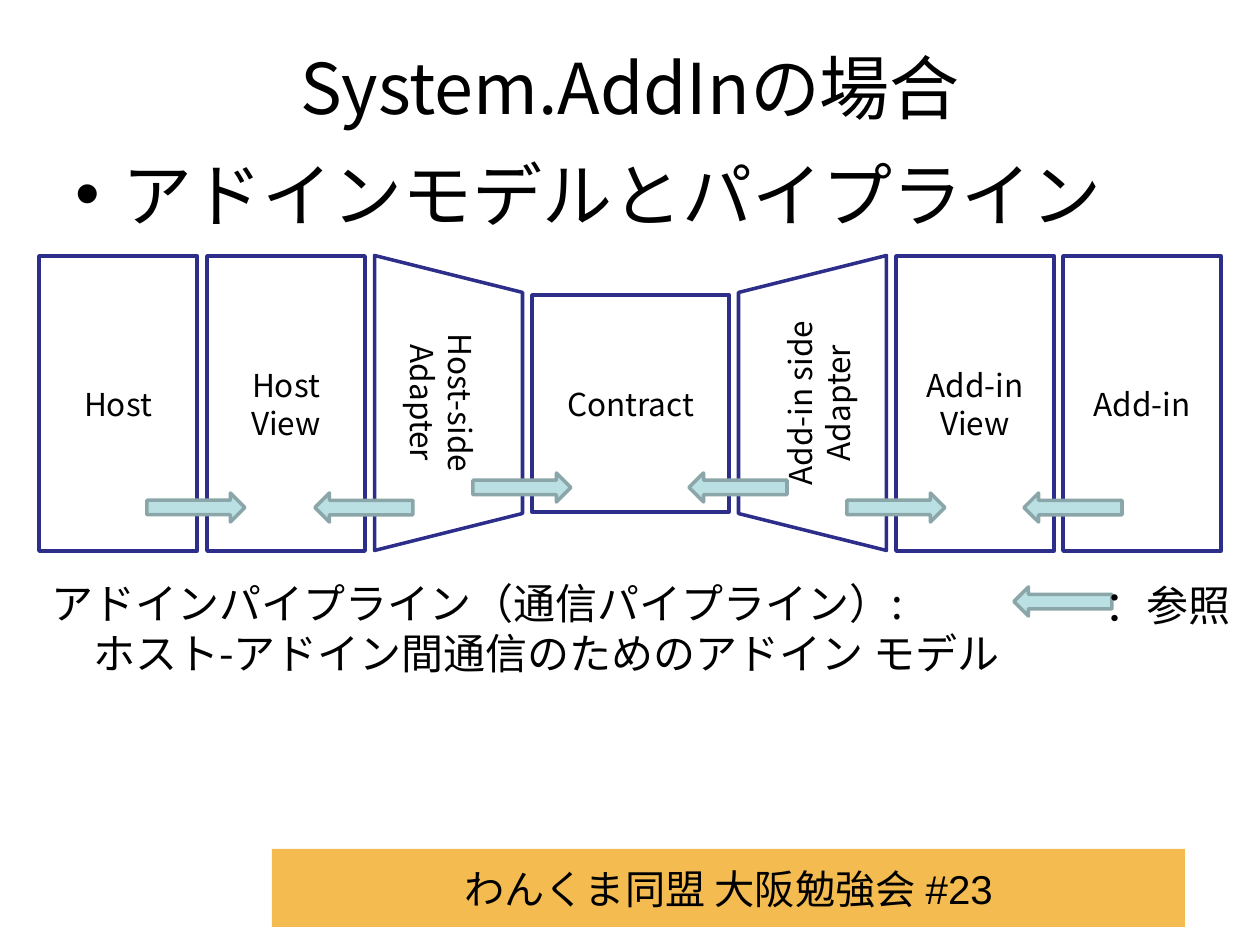
from lxml import etree
from pptx import Presentation
from pptx.dml.color import RGBColor
from pptx.enum.shapes import MSO_SHAPE
from pptx.enum.text import MSO_ANCHOR, MSO_AUTO_SIZE, PP_ALIGN
from pptx.oxml.ns import qn
from pptx.util import Pt

PX = 914400 // 126
RECTANGLE = MSO_SHAPE.RECTANGLE
TRAPEZOID = MSO_SHAPE.TRAPEZOID
RIGHT_ARROW = MSO_SHAPE.RIGHT_ARROW
LEFT, CENTER = PP_ALIGN.LEFT, PP_ALIGN.CENTER
TOP, MIDDLE = MSO_ANCHOR.TOP, MSO_ANCHOR.MIDDLE
NO_AUTOFIT = MSO_AUTO_SIZE.NONE

BLACK = RGBColor(0x00, 0x00, 0x00)
WHITE = RGBColor(0xFF, 0xFF, 0xFF)
NAVY = RGBColor(0x2D, 0x2D, 0x8A)
PALE_TEAL = RGBColor(0xBB, 0xE0, 0xE3)
GREY_TEAL = RGBColor(0x8A, 0xA6, 0xA8)
ORANGE = RGBColor(0xF3, 0xBB, 0x50)
JAPANESE_FONT = "Noto Sans CJK JP"

STAGE_TOP, STAGE_WIDTH, STAGE_HEIGHT = 256, 158, 295
ADAPTER_DEPTH = 148
ARROW_WIDTH, ARROW_HEIGHT = 98, 29


def px(*lengths):
    return [length * PX for length in lengths]


def write_text(frame, text, size=18, font=JAPANESE_FONT, align=CENTER,
               anchor=MIDDLE, wrap=True):
    frame.auto_size = NO_AUTOFIT
    frame.word_wrap = wrap
    frame.vertical_anchor = anchor
    frame.text = text
    for paragraph in frame.paragraphs:
        paragraph.alignment = align
        paragraph.space_before = Pt(0)
        for run in paragraph.runs:
            run.font.size = Pt(size)
            run.font.name = font
            run.font.color.rgb = BLACK
            latin = run.font._element.find(qn("a:latin"))
            east_asian = etree.Element(qn("a:ea"), typeface=JAPANESE_FONT)
            latin.addnext(east_asian)


def fill_placeholder(placeholder, box, text, **text_format):
    placeholder.left, placeholder.top, placeholder.width, placeholder.height = px(*box)
    write_text(placeholder.text_frame, text, **text_format)


def add_block(slide, preset, box, fill, line=None, rotation=0):
    block = slide.shapes.add_shape(preset, *px(*box))
    block.shadow.inherit = False
    block.rotation = rotation
    block.fill.solid()
    block.fill.fore_color.rgb = fill
    if line is None:
        block.line.fill.background()
    else:
        block.line.color.rgb = line
        block.line.width = Pt(2)
    return block


def add_stage(slide, left, label):
    box = (left, STAGE_TOP, STAGE_WIDTH, STAGE_HEIGHT)
    stage = add_block(slide, RECTANGLE, box, WHITE, NAVY)
    write_text(stage.text_frame, label)


def add_adapter(slide, left, label, rotation):
    turn = (STAGE_HEIGHT - ADAPTER_DEPTH) // 2
    box = (left - turn, STAGE_TOP + turn, STAGE_HEIGHT, ADAPTER_DEPTH)
    adapter = add_block(slide, TRAPEZOID, box, WHITE, NAVY, rotation)
    write_text(adapter.text_frame, label, wrap=False)


def add_reference_arrow(slide, left, top, rotation):
    box = (left, top, ARROW_WIDTH, ARROW_HEIGHT)
    add_block(slide, RIGHT_ARROW, box, PALE_TEAL, GREY_TEAL, rotation)


def add_note(slide, box, text, wrap):
    note = slide.shapes.add_textbox(*px(*box))
    write_text(note.text_frame, text, size=24, align=LEFT, anchor=TOP, wrap=wrap)


def main():
    presentation = Presentation()
    presentation.slide_width, presentation.slide_height = px(1260, 945)
    slide = presentation.slides.add_slide(presentation.slide_layouts[1])

    banner = add_block(slide, RECTANGLE, (272, 849, 913, 78), ORANGE)
    write_text(banner.text_frame, "わんくま同盟 大阪勉強会 #23", size=23, font="Arial")

    title, body = slide.placeholders
    fill_placeholder(title, (63, 38, 1134, 97), "System.AddInの場合", size=40)
    fill_placeholder(body, (63, 145, 1134, 699), "アドインモデルとパイプライン",
                     size=40, align=LEFT, anchor=TOP)

    for left, label in ((39, "Host"), (207, "Host\nView"),
                        (896, "Add-in\nView"), (1063, "Add-in")):
        add_stage(slide, left, label)
    add_adapter(slide, 374, "Host-side\nAdapter", 90)
    add_adapter(slide, 738, "Add-in side\nAdapter", 270)
    contract = add_block(slide, RECTANGLE, (532, 295, 197, 217), WHITE, NAVY)
    write_text(contract.text_frame, "Contract")

    add_note(slide, (39, 571, 988, 115),
             "アドインパイプライン（通信パイプライン）:\n"
             "\u3000ホスト-アドイン間通信のためのアドイン モデル".replace("\u3000", "　"),
             wrap=True)

    for left, top, rotation in ((147, 493, 0), (315, 493, 180),
                                (473, 473, 0), (689, 473, 180),
                                (847, 493, 0), (1024, 493, 180),
                                (1014, 587, 180)):
        add_reference_arrow(slide, left, top, rotation)
    add_note(slide, (1092, 573, 152, 63), "：参照", wrap=False)

    presentation.save("out.pptx")


if __name__ == "__main__":
    main()
